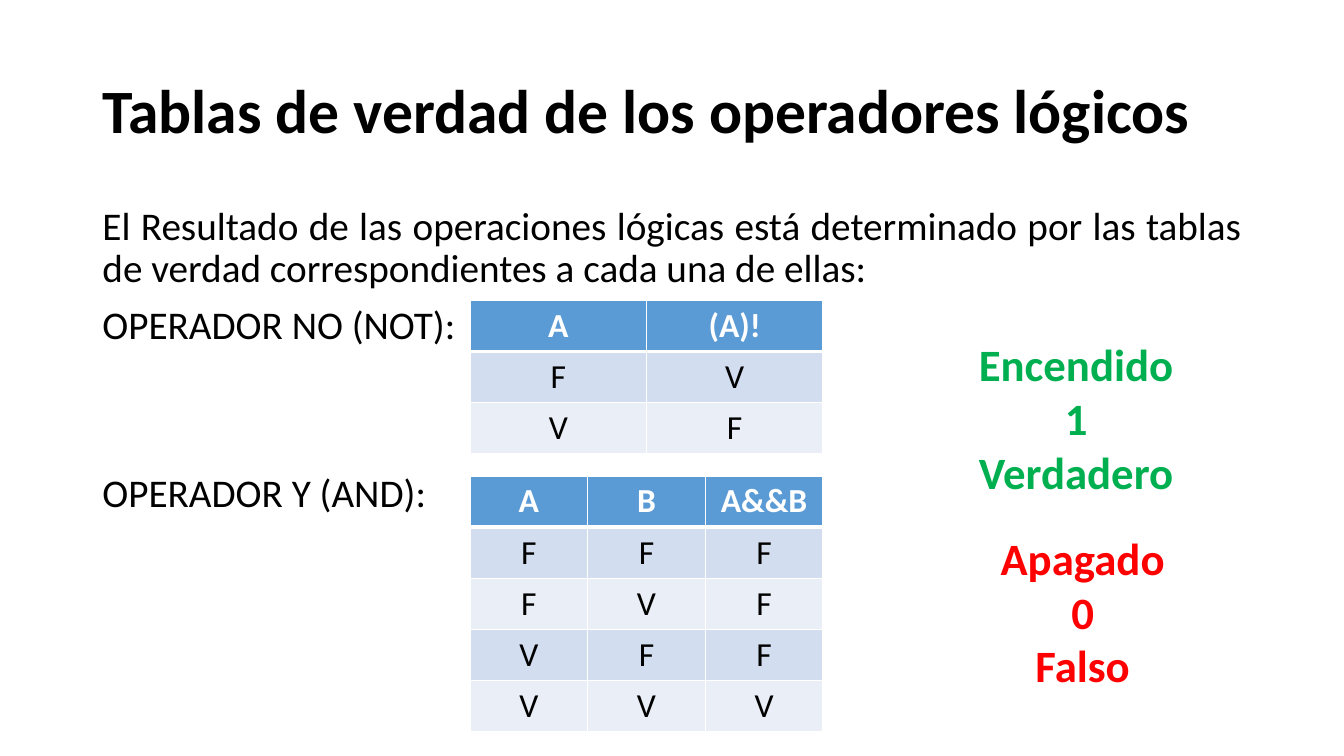
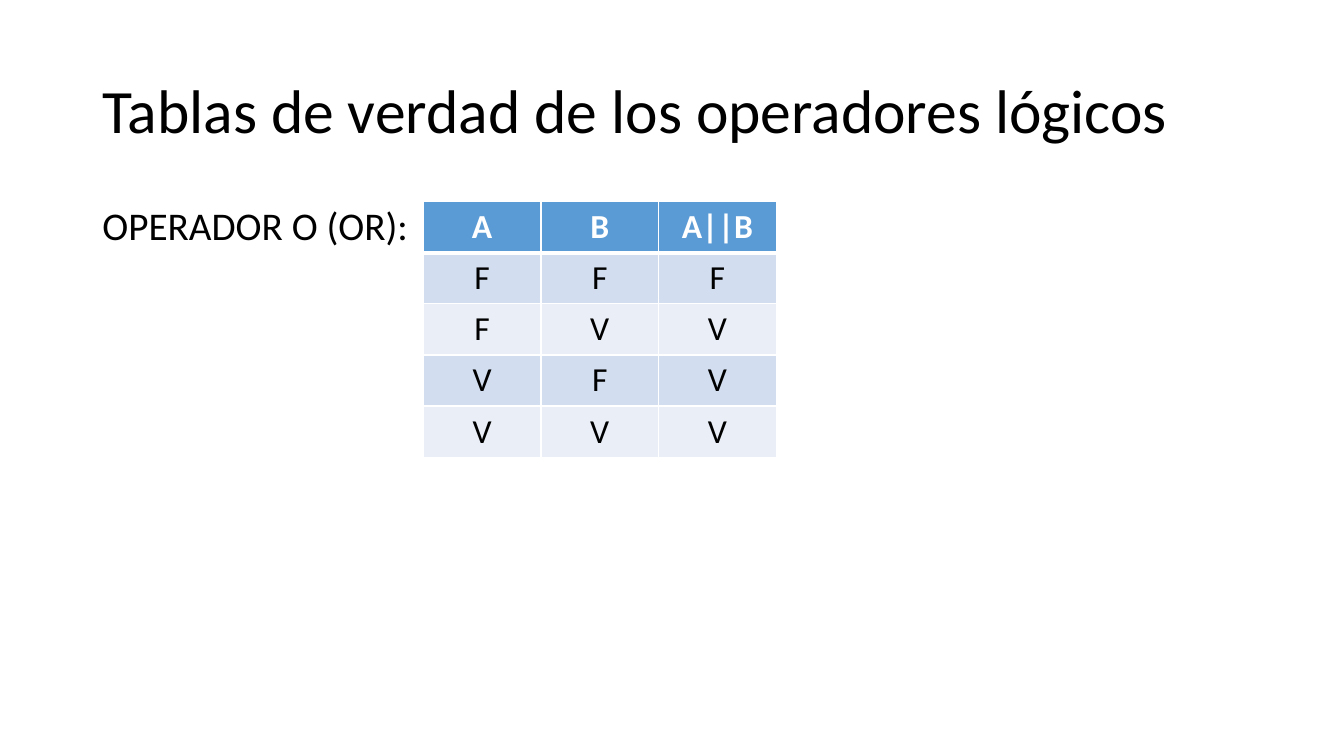
from lxml import etree
from pptx import Presentation
from pptx.dml.color import RGBColor
from pptx.enum import text
from pptx.oxml import ns
from pptx.util import Pt

COLORS = {
    "ink": "000000", "white": "FFFFFF", "header": "5B9BD5",
    "band_dark": "D2DEEF", "band_light": "EAEFF7",
    "on": "00B050", "off": "FF0000",
}
FONT = "Calibri"
ALIGN = text.PP_ALIGN
TITLE = "Tablas de verdad de los operadores lógicos"
TITLE_BOX = (66, 28.8, 828, 104.4)
BODY_BOX = (66, 144, 828, 342.7)
TABLE_WIDTH, ROW_HEIGHT = 252, 36.5


# Shared text and placement helpers
def rgb(name):
    return RGBColor.from_string(COLORS[name])


def place(sp, box):
    for name, value in zip(("left", "top", "width", "height"), box):
        setattr(sp, name, Pt(value))


def write(p, words, size, color="ink", bold=False, **layout):
    r = p.add_run()
    r.text = words
    r.font.color.rgb = rgb(color)
    for name, value in {"name": FONT, "size": Pt(size), "bold": bold}.items():
        setattr(r.font, name, value)
    for name, value in layout.items():
        setattr(p, name, value)


def paragraphs(tf, count):
    return [tf.paragraphs[0]] + [tf.add_paragraph() for _ in range(count - 1)]


# Title and body placeholders
def add_title(s, box, bold):
    sp = s.shapes.title
    place(sp, box)
    tf = sp.text_frame
    tf.vertical_anchor = text.MSO_ANCHOR.MIDDLE
    tf.auto_size = text.MSO_AUTO_SIZE.NONE
    write(tf.paragraphs[0], TITLE, 44, bold=bold,
          alignment=ALIGN.LEFT, line_spacing=0.9)


def add_body(s, box, lines, align):
    """Each line is a pair of words and space before."""
    sp = s.placeholders[1]
    place(sp, box)
    tf = sp.text_frame
    tf.auto_size = text.MSO_AUTO_SIZE.NONE
    for p, (words, gap) in zip(paragraphs(tf, len(lines)), lines):
        write(p, words, 28, alignment=align, line_spacing=0.9, space_before=Pt(gap))
        pPr = p._p.get_or_add_pPr()
        pPr.set("marL", "0")
        pPr.set("indent", "0")
        etree.SubElement(pPr, ns.qn("a:buNone"))


# Truth tables
def set_borders(cell, **widths):
    tcPr = cell._tc.get_or_add_tcPr()
    for side in ("L", "R", "T", "B"):
        ln = etree.SubElement(tcPr, ns.qn("a:ln" + side), w=str(Pt(widths.get(side, 1))))
        fill = etree.SubElement(ln, ns.qn("a:solidFill"))
        etree.SubElement(fill, ns.qn("a:srgbClr"), val=COLORS["white"])


def add_truth_table(s, left, top, rows):
    """Each row is a string of cells parted by spaces."""
    grid = [row.split() for row in rows]
    count, cols = len(grid), len(grid[0])
    table = s.shapes.add_table(count, cols, Pt(left), Pt(top), Pt(TABLE_WIDTH),
                               Pt(ROW_HEIGHT * count)).table
    for i, row in enumerate(grid):
        table.rows[i].height = Pt(ROW_HEIGHT)
        header = i == 0
        fill = "header" if header else ("band_light", "band_dark")[i % 2]
        edges = {0: {"B": 3}, 1: {"T": 3}}.get(i, {})
        for j, words in enumerate(row):
            cell = table.cell(i, j)
            set_borders(cell, **edges)
            cell.fill.solid()
            cell.fill.fore_color.rgb = rgb(fill)
            write(cell.text_frame.paragraphs[0], words, 24,
                  "white" if header else "ink", header, alignment=ALIGN.CENTER)


# Coloured state legends
def add_state(s, box, lines, color):
    tf = s.shapes.add_textbox(*map(Pt, box)).text_frame
    tf.word_wrap = True
    tf.auto_size = text.MSO_AUTO_SIZE.SHAPE_TO_FIT_TEXT
    for p, words in zip(paragraphs(tf, len(lines)), lines):
        write(p, words, 32, color, True, alignment=ALIGN.CENTER)


def add_slide(prs, lines, align, bold_title=False):
    s = prs.slides.add_slide(prs.slide_layouts[1])
    add_title(s, TITLE_BOX, bold_title)
    add_body(s, BODY_BOX, lines, align)
    return s


def main():
    prs = Presentation()
    prs.slide_width, prs.slide_height = Pt(960), Pt(540)

    # NOT and AND
    s = add_slide(prs, [
        ("El Resultado de las operaciones lógicas está determinado por las tablas "
         "de verdad correspondientes a cada una de ellas:", 10),
        ("OPERADOR NO (NOT):", 10),
        ("OPERADOR Y (AND):", 90),
    ], ALIGN.JUSTIFY, bold_title=True)
    add_truth_table(s, 335.8, 214.5, ["A (A)!", "F V", "V F"])
    add_truth_table(s, 335.8, 340, ["A B A&&B", "F F F", "F V F", "V F F", "V V V"])
    add_state(s, (628, 237, 281.5, 124), ["Encendido", "1", "Verdadero"], "on")
    add_state(s, (632.6, 375.4, 281.5, 124), ["Apagado", "0", "Falso"], "off")

    # OR
    s = add_slide(prs, [("OPERADOR O (OR):", 10)], ALIGN.LEFT)
    add_truth_table(s, 302.4, 144, ["A B A||B", "F F F", "F V V", "V F V", "V V V"])

    prs.save("out.pptx")


if __name__ == "__main__":
    main()
